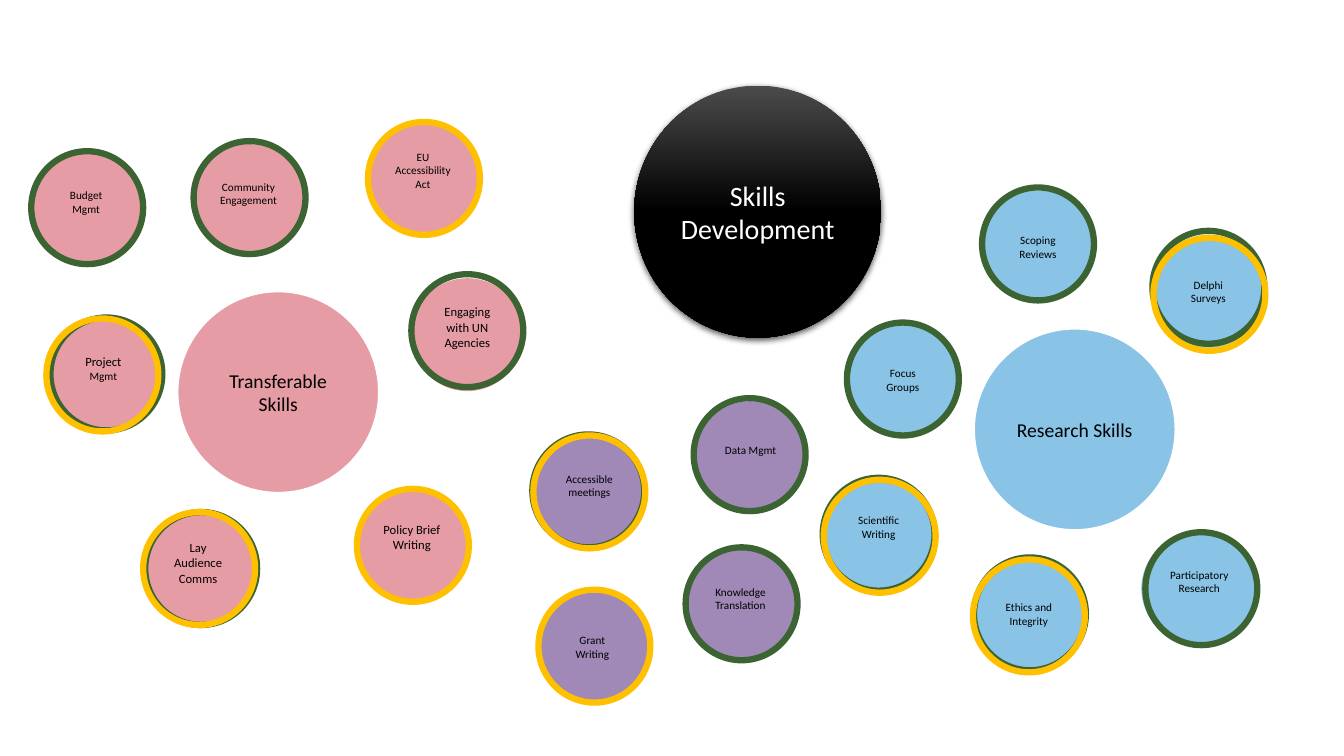
from lxml import etree
from pptx import Presentation
from pptx.dml.color import RGBColor
from pptx.enum.shapes import MSO_SHAPE
from pptx.enum.text import MSO_ANCHOR, PP_ALIGN
from pptx.oxml.ns import qn
from pptx.util import Emu, Pt

OVAL = MSO_SHAPE.OVAL
MIDDLE = MSO_ANCHOR.MIDDLE
CENTER = PP_ALIGN.CENTER

PX = 9144
SLIDE = (1333, 750)
RING = (111, 112)
INSET = 5
LINE_PX_PER_PT = 1.7

THEME = {
    "font": "Calibri",
    "pink": "E69CA4", "blue": "89C3E5", "purple": "A088B7",
    "green": "3B6432", "gold": "FFC000",
    "black": "000000", "white": "FFFFFF", "sheen": "4B4B4B",
    "title": 20, "hub": 14, "medium": 9, "small": 8,
    "hub_line": 1.5, "ring_line": 4.5,
}

TITLE = ("Skills Development", (629, 85, 245, 250))

HUBS = [
    ("Transferable Skills", "pink", (176, 289, 200, 200)),
    ("Research Skills", "blue", (966, 326, 200, 200)),
]

# label runs, colour, left, top, size of the line left free below (None for centred)
BUBBLES = [
    ([("Ethics and Integrity", "small")], "blue", 965, 553, None),
    ([("Grant Writing", "small")], "purple", 532, 586, None),
    ([("Knowledge Translation", "small")], "purple", 679, 545, "small"),
    ([("Scientific Writing", "small")], "blue", 816, 474, "small"),
    ([("Community Engagement", "small")], "pink", 191, 143, "small"),
    ([("Engaging with UN Agencies", "medium")], "pink", 408, 276, "medium"),
    ([("Policy Brief Writing", "medium")], "pink", 353, 484, "medium"),
    ([("EU Accessibility Act", "small")], "pink", 364, 120, "small"),
    ([("Lay Audience Comms", "medium")], "pink", 141, 510, "medium"),
    ([("Project ", "medium"), ("Mgmt", "small")], "pink", 47, 317, "medium"),
    ([("Budget Mgmt", "small")], "pink", 30, 152, "medium"),
    ([("Scoping Reviews", "small")], "blue", 974, 189, None),
    ([("Delphi Surveys", "small")], "blue", 1143, 233, None),
    ([("Focus Groups", "small")], "blue", 840, 321, None),
    ([("Accessible meetings", "small")], "purple", 529, 433, "small"),
    ([("Participatory Research", "small")], "blue", 1132, 528, "small"),
    ([("Data Mgmt", "small")], "purple", 689, 398, "small"),
]
WIDE = {"Participatory Research": 115}

RINGS = {
    "green": [
        (192, 140), (408, 272), (144, 508), (50, 315), (31, 150),
        (528, 431), (688, 395), (680, 543), (816, 474), (840, 320),
        (974, 186), (1143, 229), (966, 553), (1136, 528),
    ],
    "gold": [
        (365, 121), (46, 316), (142, 508), (354, 485), (529, 432),
        (534, 585), (817, 476), (965, 555), (1144, 236),
    ],
}


def rgb(name):
    return RGBColor.from_string(THEME[name])


def add_circle(shapes, box, fill=None, line=None, width=0):
    sp = shapes.add_shape(OVAL, *(Emu(v * PX) for v in box))
    sp.shadow.inherit = False
    if fill:
        sp.fill.solid()
        sp.fill.fore_color.rgb = rgb(fill)
    else:
        sp.fill.background()
    if line:
        sp.line.color.rgb = rgb(line)
        sp.line.width = Pt(THEME[width])
    else:
        sp.line.fill.background()
    return sp


def add_label(sp, runs, color="black", below=None):
    tf = sp.text_frame
    tf.word_wrap = True
    tf.vertical_anchor = MIDDLE
    tf.margin_top = Emu(INSET * PX)
    lift = round(THEME[below] * LINE_PX_PER_PT) if below else 0
    tf.margin_bottom = Emu((INSET + lift) * PX)
    p = tf.paragraphs[0]
    p.alignment = CENTER
    p.font.name = THEME["font"]
    p.font.color.rgb = rgb(color)
    p.font.size = Pt(THEME[runs[0][1]])
    for text, size in runs:
        r = p.add_run()
        r.text = text
        if size != runs[0][1]:
            r.font.size = Pt(THEME[size])


def add_sheen(sp):
    sp.fill.gradient()
    sp.fill.gradient_angle = 270
    for stop, color, position in zip(sp.fill.gradient_stops, ("sheen", "black"), (0, 0.5)):
        stop.color.rgb = rgb(color)
        stop.position = position


def add_shadow(sp):
    effects = sp.element.spPr.find(qn("a:effectLst"))
    shadow = etree.SubElement(
        effects, qn("a:outerShdw"), blurRad=str(Pt(4.5)), dist=str(Pt(1.5)),
        dir="5400000", algn="ctr", rotWithShape="0")
    color = etree.SubElement(shadow, qn("a:srgbClr"), val=THEME["black"])
    etree.SubElement(color, qn("a:alpha"), val="63000")


def main():
    prs = Presentation()
    prs.slide_width, prs.slide_height = (Emu(v * PX) for v in SLIDE)
    s = prs.slides.add_slide(prs.slide_layouts[6])

    text, box = TITLE
    sp = add_circle(s.shapes, box)
    add_sheen(sp)
    add_shadow(sp)
    add_label(sp, [(text, "title")], "white")

    for text, color, box in HUBS:
        sp = add_circle(s.shapes, box, color, "white", "hub_line")
        add_label(sp, [(text, "hub")])

    for runs, color, x, y, below in BUBBLES:
        width = WIDE.get(runs[0][0], RING[0])
        sp = add_circle(s.shapes, (x, y, width, RING[1]), color)
        add_label(sp, runs, below=below)

    for color, places in RINGS.items():
        group = s.shapes.add_group_shape()
        for place in places:
            add_circle(group.shapes, place + RING, line=color, width="ring_line")

    prs.save("out.pptx")


if __name__ == "__main__":
    main()
